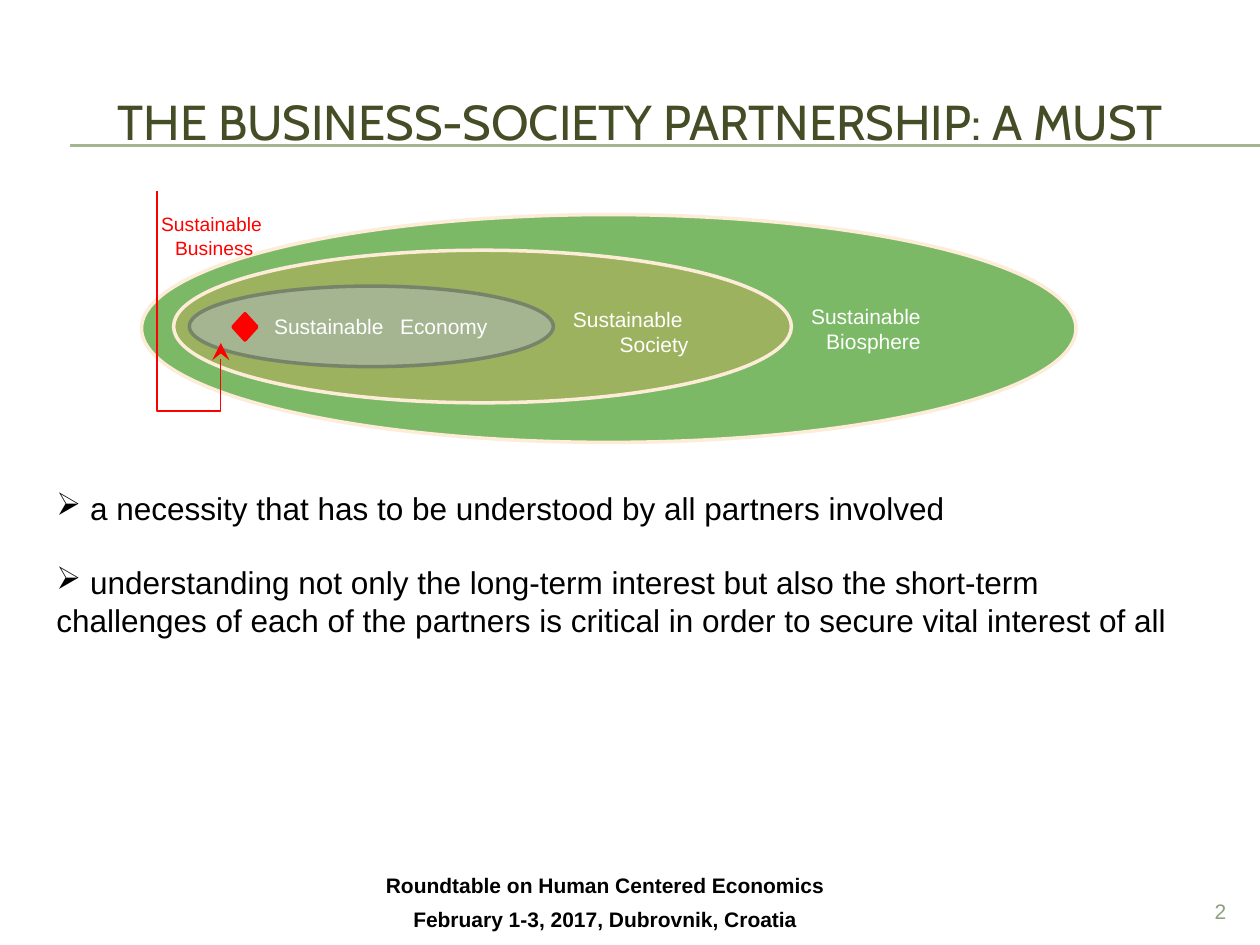
from dataclasses import dataclass
from typing import Optional

from lxml import etree
from pptx import Presentation
from pptx.dml.color import RGBColor
from pptx.enum import shapes, text
from pptx.oxml import ns
from pptx.util import Pt

BLACK = RGBColor(0x00, 0x00, 0x00)
WHITE = RGBColor(0xFF, 0xFF, 0xFF)
RED = RGBColor(0xFF, 0x00, 0x00)
OLIVE = RGBColor(0x44, 0x4D, 0x26)
SAGE = RGBColor(0xA5, 0xB5, 0x92)
DARK_SAGE = RGBColor(0x78, 0x84, 0x6A)
PAGE_SAGE = RGBColor(0x90, 0x9E, 0x80)
GREEN = RGBColor(0x7C, 0xB9, 0x67)
MOSS = RGBColor(0x9D, 0xB2, 0x5E)
CREAM = RGBColor(0xFC, 0xEC, 0xD8)

CENTER, RIGHT, LEFT = text.PP_ALIGN.CENTER, text.PP_ALIGN.RIGHT, text.PP_ALIGN.LEFT
MIDDLE, TOP = text.MSO_ANCHOR.MIDDLE, text.MSO_ANCHOR.TOP
OVAL, DIAMOND = shapes.MSO_SHAPE.OVAL, shapes.MSO_SHAPE.DIAMOND


@dataclass
class Label:
    lines: list[str]
    size: float
    color: RGBColor
    align: text.PP_ALIGN = CENTER
    anchor: text.MSO_ANCHOR = MIDDLE
    font: str = "Arial"
    bold: bool = False
    gap: float = 0
    bullet: Optional[str] = None
    top_inset: float = 3.6
    right_inset: float = 7.2


@dataclass
class Block:
    left: float
    top: float
    width: float
    height: float
    label: Optional[Label] = None
    preset: Optional[shapes.MSO_SHAPE] = None
    fill: Optional[RGBColor] = None
    outline: Optional[RGBColor] = None


def write_label(frame, label: Label) -> None:
    frame.word_wrap = True
    frame.vertical_anchor = label.anchor
    frame.margin_left, frame.margin_right = Pt(7.2), Pt(label.right_inset)
    frame.margin_top, frame.margin_bottom = Pt(label.top_inset), Pt(3.6)
    for index, line in enumerate(label.lines):
        paragraph = frame.add_paragraph() if index else frame.paragraphs[0]
        paragraph.text = line
        paragraph.alignment = label.align
        if index and label.gap:
            paragraph.space_before = Pt(label.gap)
        if label.bullet:
            bullet = etree.SubElement(paragraph._p.get_or_add_pPr(), ns.qn("a:buChar"))
            bullet.set("char", label.bullet)
        font = paragraph.font
        font.name, font.size, font.bold = label.font, Pt(label.size), label.bold
        font.color.rgb = label.color


def draw_block(slide, block: Block) -> None:
    box = Pt(block.left), Pt(block.top), Pt(block.width), Pt(block.height)
    if block.preset is None:
        shape = slide.shapes.add_textbox(*box)
    else:
        shape = slide.shapes.add_shape(block.preset, *box)
        shape.shadow.inherit = False
        shape.fill.solid()
        shape.fill.fore_color.rgb = block.fill
        shape.line.color.rgb = block.outline
        shape.line.width = Pt(2)
    if block.label:
        write_label(shape.text_frame, block.label)


def draw_rule(slide, top: float) -> None:
    rule = slide.shapes.add_connector(
        shapes.MSO_CONNECTOR.STRAIGHT, Pt(40.3), Pt(top), Pt(720), Pt(top))
    rule.line.color.rgb = SAGE
    rule.line.width = Pt(0.75)
    etree.SubElement(rule._element.spPr, ns.qn("a:effectLst"))


def draw_arrow(slide, points: list[tuple[float, float]]) -> None:
    start, *rest = [(Pt(x), Pt(y)) for x, y in points]
    builder = slide.shapes.build_freeform(*start)
    builder.add_line_segments(rest, close=False)
    arrow = builder.convert_to_shape()
    arrow.shadow.inherit = False
    arrow.fill.background()
    arrow.line.color.rgb = RED
    arrow.line.width = Pt(0.79)
    etree.SubElement(arrow.line._get_or_add_ln(), ns.qn("a:tailEnd"),
                     type="stealth", w="lg", len="lg")


HEADINGS = [
    Block(33.8, 491, 624.2, 49, Label(
        ["Roundtable on Human Centered Economics", "February 1-3, 2017, Dubrovnik, Croatia"],
        12, BLACK, bold=True, gap=5)),
    Block(23.8, 36, 684, 66.2, Label(
        ["THE BUSINESS-SOCIETY PARTNERSHIP: A MUST"], 28, OLIVE, font="Cabin")),
]

# Nested systems, from the outermost inwards
SYSTEMS = [
    Block(80.9, 122.6, 534, 130.2, Label(
        ["Sustainable", "Biosphere"], 12, WHITE, RIGHT, right_inset=10.5),
        OVAL, GREEN, CREAM),
    Block(99.2, 143, 353, 87.2, Label(
        ["Sustainable \vSociety"], 12, WHITE, RIGHT, top_inset=9.6),
        OVAL, MOSS, CREAM),
    Block(108.2, 163.5, 208, 46, Label(
        ["Sustainable \tEconomy"], 12, WHITE, RIGHT),
        OVAL, SAGE, DARK_SAGE),
    Block(133.2, 179.3, 13.6, 15, None, DIAMOND, RED, RED),
]

TEXTS = [
    Block(65.5, 128.2, 110.9, 13, Label(["Sustainable", " Business"], 11, RED)),
    Block(648, 509.8, 59.8, 19.4, Label(["2"], 12, PAGE_SAGE, RIGHT, TOP)),
    Block(25.2, 275.8, 652.3, 181.4, Label(
        [" a necessity that has to be understood by all partners involved",
         " understanding not only the long-term interest but also the short-term "
         "challenges of each of the partners is critical in order to secure "
         "vital interest of all"],
        18, BLACK, LEFT, TOP, gap=21, bullet="➢")),
]


def main() -> None:
    presentation = Presentation()
    presentation.slide_width, presentation.slide_height = Pt(720), Pt(540)
    slide = presentation.slides.add_slide(presentation.slide_layouts[6])

    # Double rule, footer and title
    for top in (82.8, 83.5):
        draw_rule(slide, top)
    for block in HEADINGS:
        draw_block(slide, block)

    # Diagram with the arrow from business into the economy
    for block in SYSTEMS:
        draw_block(slide, block)
    draw_arrow(slide, [(89.7, 109.2), (89.7, 234.8), (126.2, 234.8), (126.2, 196)])

    # Business label, page number and arguments
    for block in TEXTS:
        draw_block(slide, block)

    presentation.save("out.pptx")


if __name__ == "__main__":
    main()
